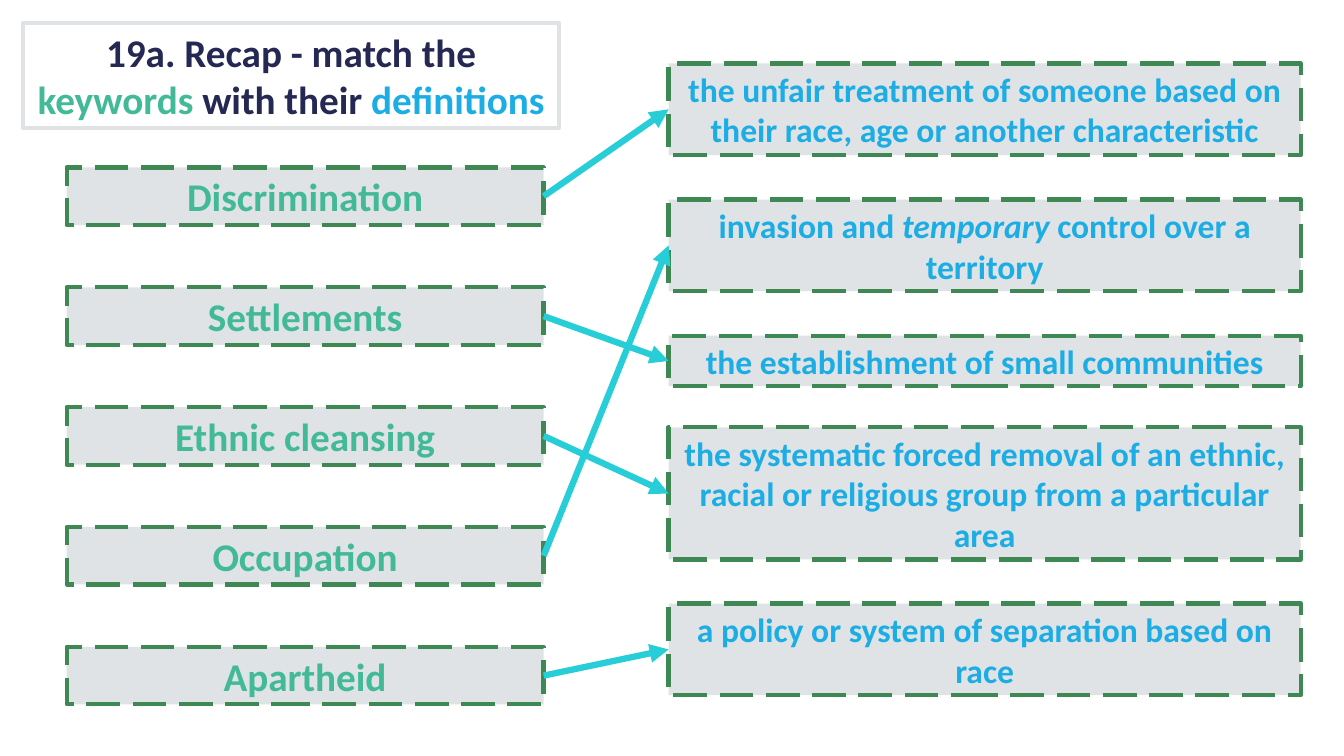
from lxml import etree
from pptx import Presentation
from pptx.dml.color import RGBColor
from pptx.enum.dml import MSO_LINE
from pptx.enum.shapes import MSO_CONNECTOR, MSO_SHAPE
from pptx.enum.text import MSO_ANCHOR, MSO_AUTO_SIZE, PP_ALIGN
from pptx.oxml.ns import qn
from pptx.util import Cm, Pt

RECTANGLE = MSO_SHAPE.RECTANGLE
STRAIGHT = MSO_CONNECTOR.STRAIGHT
LONG_DASH = MSO_LINE.LONG_DASH
CENTER = PP_ALIGN.CENTER
MIDDLE = MSO_ANCHOR.MIDDLE
GROW = MSO_AUTO_SIZE.SHAPE_TO_FIT_TEXT

FONT = "Calibri"
WHITE = "FFFFFF"
GREY = "DFE3E5"
NAVY = "242852"
GREEN = "42BA97"
DARK_GREEN = "3E8853"
BLUE = "1CADE4"
TURQUOISE = "27CED7"
RIGHT_SITE, LEFT_SITE = 3, 1

TITLE = [
    ("19a. Recap - match the ", NAVY, False),
    ("keywords", GREEN, False),
    (" with their ", NAVY, False),
    ("definitions", BLUE, False),
]
KEYWORDS = ["Discrimination", "Settlements", "Ethnic cleansing", "Occupation", "Apartheid"]
DEFINITIONS = [
    (1.6, 2.31, [("the unfair treatment of someone based on their race, age or another characteristic", False)]),
    (5.03, 2.31, [("invasion and ", False), ("temporary", True), (" control over a territory", False)]),
    (8.46, 1.27, [("the establishment of small communities", False)]),
    (10.77, 3.33, [("the systematic forced removal of an ethnic, racial or religious group from a particular area", False)]),
    (15.21, 2.31, [("a policy or system of separation based on race", False)]),
]
MATCHES = [0, 2, 3, 1, 4]


def color(value):
    return RGBColor.from_string(value)


def style_box(box, fill, line, spans, size):
    box.fill.solid()
    box.fill.fore_color.rgb = color(fill)
    box.line.color.rgb = color(line)
    box.line.width = Pt(3)
    frame = box.text_frame
    frame.word_wrap = True
    frame.auto_size = GROW
    frame.vertical_anchor = MIDDLE
    para = frame.paragraphs[0]
    para.alignment = CENTER
    para.line_spacing = 1.0
    for text, text_color, italic in spans:
        span = para.add_run()
        span.text = text
        span.font.name = FONT
        span.font.size = Pt(size)
        span.font.bold = True
        span.font.italic = italic
        span.font.color.rgb = color(text_color)


def place_title(page, left, top, width, height):
    title = page.shapes.title
    title.left, title.top = Cm(left), Cm(top)
    title.width, title.height = Cm(width), Cm(height)
    style_box(title, WHITE, GREY, TITLE, 28)


def add_card(page, left, top, width, height, spans, size):
    card = page.shapes.add_shape(RECTANGLE, Cm(left), Cm(top), Cm(width), Cm(height))
    card.shadow.inherit = False
    style_box(card, GREY, DARK_GREEN, spans, size)
    card.line.dash_style = LONG_DASH
    return card


def add_keywords(page, left, top, width, height):
    card_height = 1.45
    pitch = (height - card_height) / (len(KEYWORDS) - 1)
    return [
        add_card(page, left, top + row * pitch, width, card_height, [(word, GREEN, False)], 28)
        for row, word in enumerate(KEYWORDS)
    ]


def add_definitions(page, left, width):
    return [
        add_card(page, left, top, width, height, [(text, BLUE, italic) for text, italic in spans], 24)
        for top, height, spans in DEFINITIONS
    ]


def add_match(page, keyword, definition):
    arrow = page.shapes.add_connector(STRAIGHT, 0, 0, 0, 0)
    arrow.begin_connect(keyword, RIGHT_SITE)
    arrow.end_connect(definition, LEFT_SITE)
    arrow.line.color.rgb = color(TURQUOISE)
    arrow.line.width = Pt(4.5)
    etree.SubElement(arrow.line._get_or_add_ln(), qn("a:tailEnd"), type="triangle")
    etree.SubElement(arrow._element.spPr, qn("a:effectLst"))


def main():
    deck = Presentation()
    deck.slide_width, deck.slide_height = Cm(33.87), Cm(19.05)
    page = deck.slides.add_slide(deck.slide_layouts.get_by_name("Title Only"))
    place_title(page, 0.58, 0.58, 13.51, 2.64)
    keywords = add_keywords(page, 1.68, 4.22, 12.02, 13.53)
    definitions = add_definitions(page, 16.85, 15.93)
    for keyword, match in zip(keywords, MATCHES):
        add_match(page, keyword, definitions[match])
    deck.save("out.pptx")


if __name__ == "__main__":
    main()
